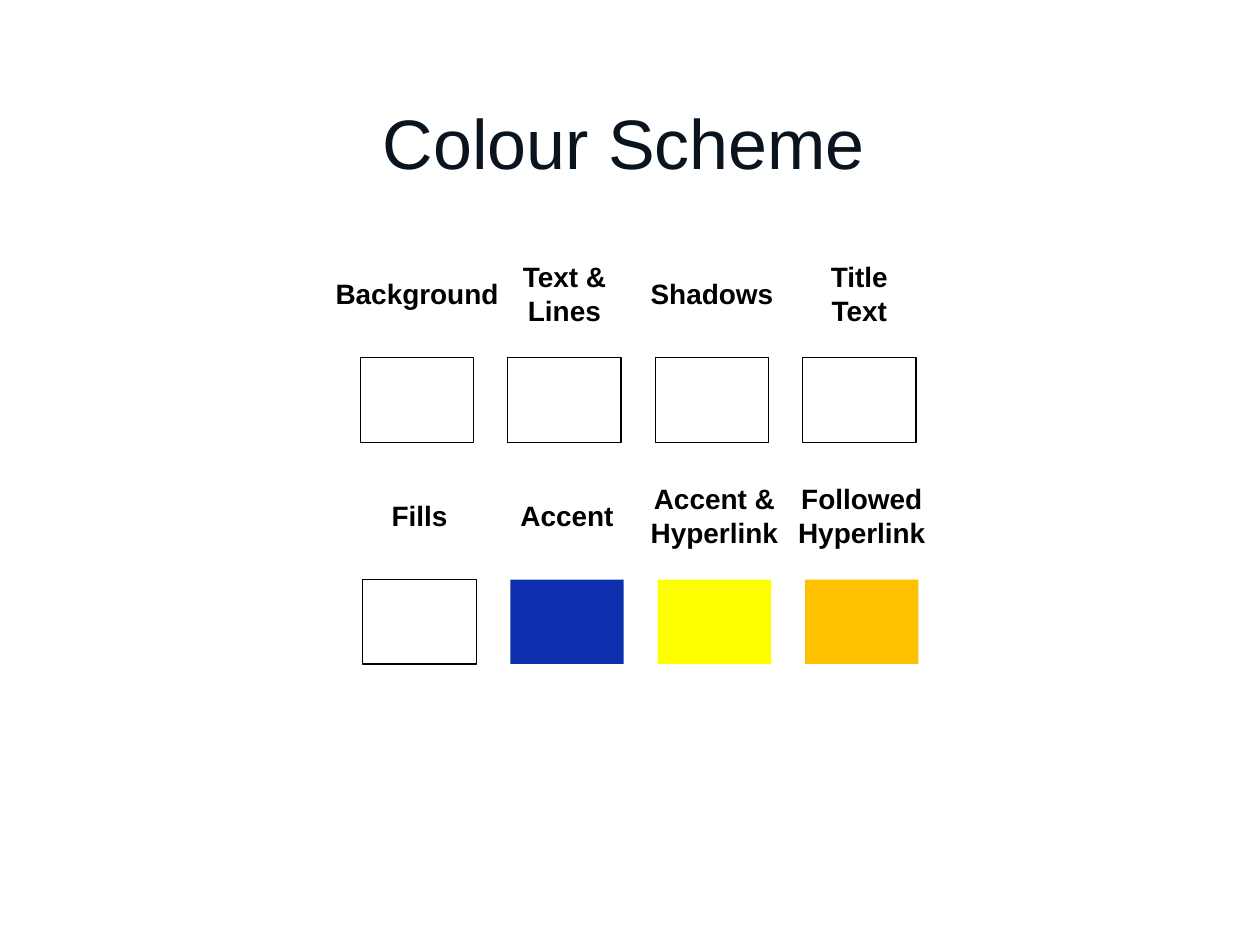
from pptx import Presentation
from pptx import util as u
from pptx.dml.color import RGBColor
from pptx.enum import shapes, text

INK = RGBColor(0x0A, 0x14, 0x1F)
BLACK = RGBColor(0, 0, 0)
WHITE = RGBColor(0xFF, 0xFF, 0xFF)
BLUE = RGBColor(0x0E, 0x2F, 0xAD)
YELLOW = RGBColor(0xFF, 0xFF, 0)
AMBER = RGBColor(0xFF, 0xC0, 0)

TITLE = "Colour Scheme"
ROWS = [
    [("Background", 1.51, WHITE), ("Text &\nLines", 0.87, WHITE),
     ("Shadows", 1.19, WHITE), ("Title\vText", 0.66, WHITE)],
    [("Fills", 0.65, WHITE), ("Accent", 0.95, BLUE),
     ("Accent &\nHyperlink", 1.23, YELLOW), ("Followed\nHyperlink", 1.23, AMBER)],
]
LEFT, TOP = 2.86, 2.84
COL, ROW, SHIFT = 1.17, 1.76, 0.02
WIDE, HIGH = 0.9, 0.67
RISE = 0.51
TALL = {1: 0.37, 2: 0.64}


def write(slide, words, box, size, color, bold=False, wrap=False):
    frame = slide.shapes.add_textbox(*map(u.Inches, box)).text_frame
    frame.word_wrap = wrap
    frame.vertical_anchor = text.MSO_ANCHOR.MIDDLE
    frame.text = words
    for par in frame.paragraphs:
        par.alignment = text.PP_ALIGN.CENTER
        font = par.font
        font.name, font.size, font.bold = "Arial", u.Pt(size), bold
        font.color.rgb = color


def swatch(slide, box, color):
    rect = slide.shapes.add_shape(shapes.MSO_SHAPE.RECTANGLE, *map(u.Inches, box))
    rect.shadow.inherit = False
    rect.fill.solid()
    rect.fill.fore_color.rgb = color
    if color == WHITE:
        rect.line.color.rgb = BLACK
        rect.line.width = u.Pt(0.75)
    else:
        rect.line.fill.background()


def main():
    deck = Presentation()
    deck.slide_width, deck.slide_height = u.Inches(10), u.Inches(7.5)
    slide = deck.slides.add_slide(deck.slide_layouts[6])
    write(slide, TITLE, (0.45, 0.5, 9, 1.25), 40, INK, wrap=True)
    for r, row in enumerate(ROWS):
        for c, (label, width, color) in enumerate(row):
            x = LEFT + c * COL + r * SHIFT
            y = TOP + r * ROW
            swatch(slide, (x, y, WIDE, HIGH), color)
            tall = TALL[len(label.splitlines())]
            box = (x + (WIDE - width) / 2, y - RISE - tall / 2, width, tall)
            write(slide, label, box, 16, BLACK, bold=True)
    deck.save("out.pptx")


if __name__ == "__main__":
    main()
